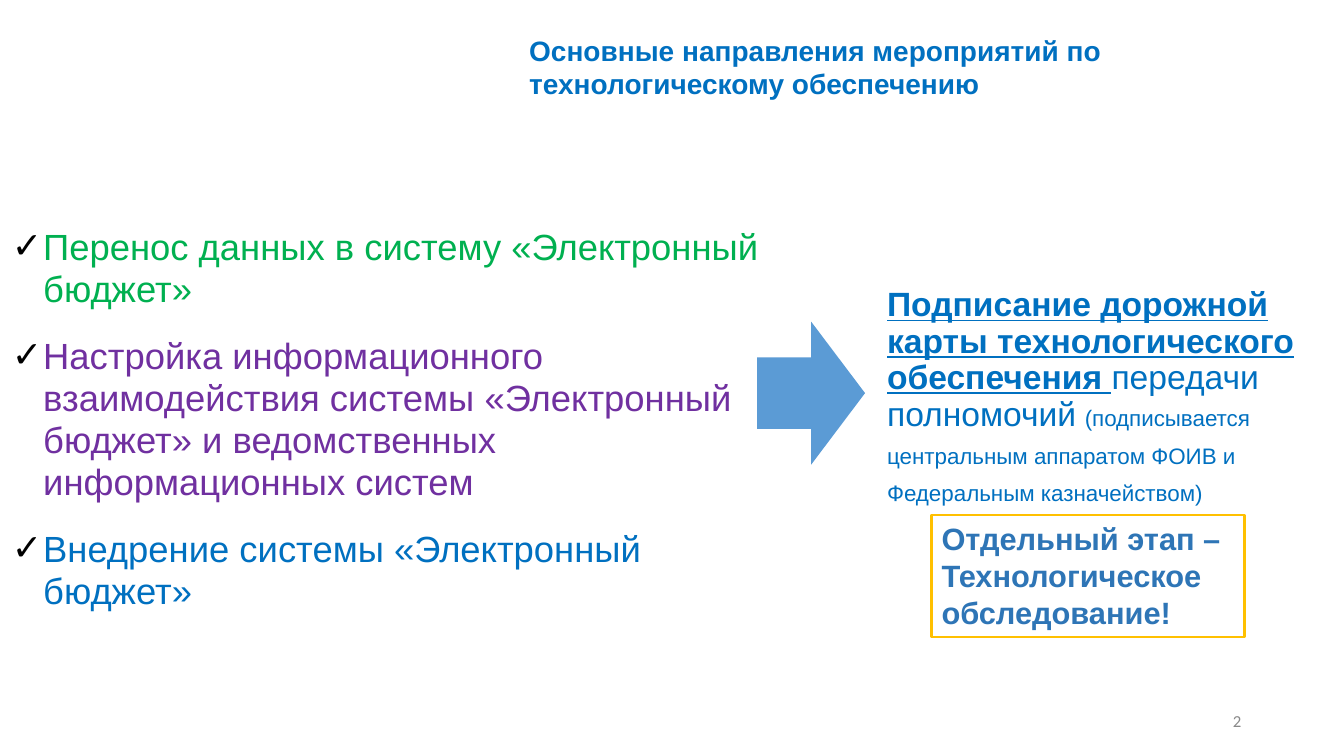
"""Builds the slide on the main directions of technological support."""
from lxml import etree
from pptx import Presentation
from pptx.dml.color import RGBColor
from pptx.enum.shapes import MSO_SHAPE
from pptx.enum.text import MSO_ANCHOR, PP_ALIGN
from pptx.oxml.ns import qn
from pptx.util import Inches, Pt

RECTANGLE, RIGHT_ARROW = MSO_SHAPE.RECTANGLE, MSO_SHAPE.RIGHT_ARROW
TOP, MIDDLE = MSO_ANCHOR.TOP, MSO_ANCHOR.MIDDLE
LEFT, RIGHT = PP_ALIGN.LEFT, PP_ALIGN.RIGHT

COLORS = {
    "blue": "0070C0", "green": "00B050", "purple": "7030A0", "black": "000000",
    "arrow": "5B9BD5", "stage": "2E75B6", "gold": "FFC000", "gray": "898989",
}
TITLE = "Основные направления мероприятий по технологическому обеспечению"
DIRECTIONS = [
    ("Перенос данных в систему «Электронный бюджет»", "green"),
    ("Настройка информационного взаимодействия системы «Электронный бюджет» "
     "и ведомственных информационных систем", "purple"),
    ("Внедрение системы «Электронный бюджет»", "blue"),
]
ROADMAP = [
    ("Подписание дорожной карты технологического обеспечения ", 24, True),
    ("передачи полномочий", 24, False),
    (" ", 22, False),
    ("(подписывается центральным аппаратом ФОИВ и Федеральным казначейством)", 16, False),
]
STAGE = "Отдельный этап – Технологическое обследование!"
PAGE_NUMBER = "2"
BULLET, BULLET_INDENT = "✓", Inches(0.31)


def color(name):
    return RGBColor.from_string(COLORS[name])


def prepare_frame(shape, anchor=TOP):
    frame = shape.text_frame
    frame.word_wrap = True
    frame.vertical_anchor = anchor
    return frame


def add_box(page, place, anchor=TOP):
    box = page.shapes.add_textbox(*map(Inches, place))
    return prepare_frame(box, anchor)


def add_shape(page, kind, place):
    shape = page.shapes.add_shape(kind, *map(Inches, place))
    shape.shadow.inherit = False
    return shape


def add_span(para, text, size, color_name, bold=False, underline=False, font="Arial"):
    span = para.add_run()
    span.text = text
    span.font.name = font
    span.font.size = Pt(size)
    span.font.bold = bold
    span.font.underline = underline
    span.font.color.rgb = color(color_name)


def set_spacing(para, line, after):
    para.line_spacing = Pt(line)
    para.space_after = Pt(after)


def add_bullet(para):
    settings = para._p.get_or_add_pPr()
    settings.set("marL", str(BULLET_INDENT))
    settings.set("indent", str(-BULLET_INDENT))
    bullet_color = etree.SubElement(settings, qn("a:buClr"))
    etree.SubElement(bullet_color, qn("a:srgbClr"), val=COLORS["black"])
    etree.SubElement(settings, qn("a:buFont"), typeface="Arial")
    etree.SubElement(settings, qn("a:buChar"), char=BULLET)


def add_directions(page):
    frame = add_box(page, (0.02, 2.19, 7.85, 3.97))
    for index, (text, color_name) in enumerate(DIRECTIONS):
        para = frame.add_paragraph() if index else frame.paragraphs[0]
        add_bullet(para)
        set_spacing(para, 30, 18)
        add_span(para, text, 26, color_name)


def add_arrow(page):
    arrow = add_shape(page, RIGHT_ARROW, (7.51, 3.19, 1.07, 1.42))
    arrow.fill.solid()
    arrow.fill.fore_color.rgb = color("arrow")
    arrow.line.fill.background()


def add_roadmap(page):
    para = add_box(page, (8.7, 2.8, 4.47, 2.29)).paragraphs[0]
    set_spacing(para, 26, 12)
    for text, size, strong in ROADMAP:
        add_span(para, text, size, "blue", strong, strong)


def add_stage(page):
    stage = add_shape(page, RECTANGLE, (9.24, 5.11, 3.1, 1.21))
    stage.fill.background()
    stage.line.color.rgb = color("gold")
    stage.line.width = Pt(2)
    para = prepare_frame(stage).paragraphs[0]
    para.alignment = LEFT
    add_span(para, STAGE, 22, "stage", True)


def main():
    deck = Presentation()
    deck.slide_width, deck.slide_height = Inches(13.33), Inches(7.5)
    page = deck.slides.add_slide(deck.slide_layouts[6])
    number = add_box(page, (11.97, 6.95, 0.44, 0.4), MIDDLE).paragraphs[0]
    number.alignment = RIGHT
    add_span(number, PAGE_NUMBER, 12, "gray", font="Calibri")
    title = add_box(page, (5.15, 0.28, 8.19, 0.77)).paragraphs[0]
    add_span(title, TITLE, 20, "blue", True)
    add_directions(page)
    add_arrow(page)
    add_roadmap(page)
    add_stage(page)
    deck.save("out.pptx")


if __name__ == "__main__":
    main()
